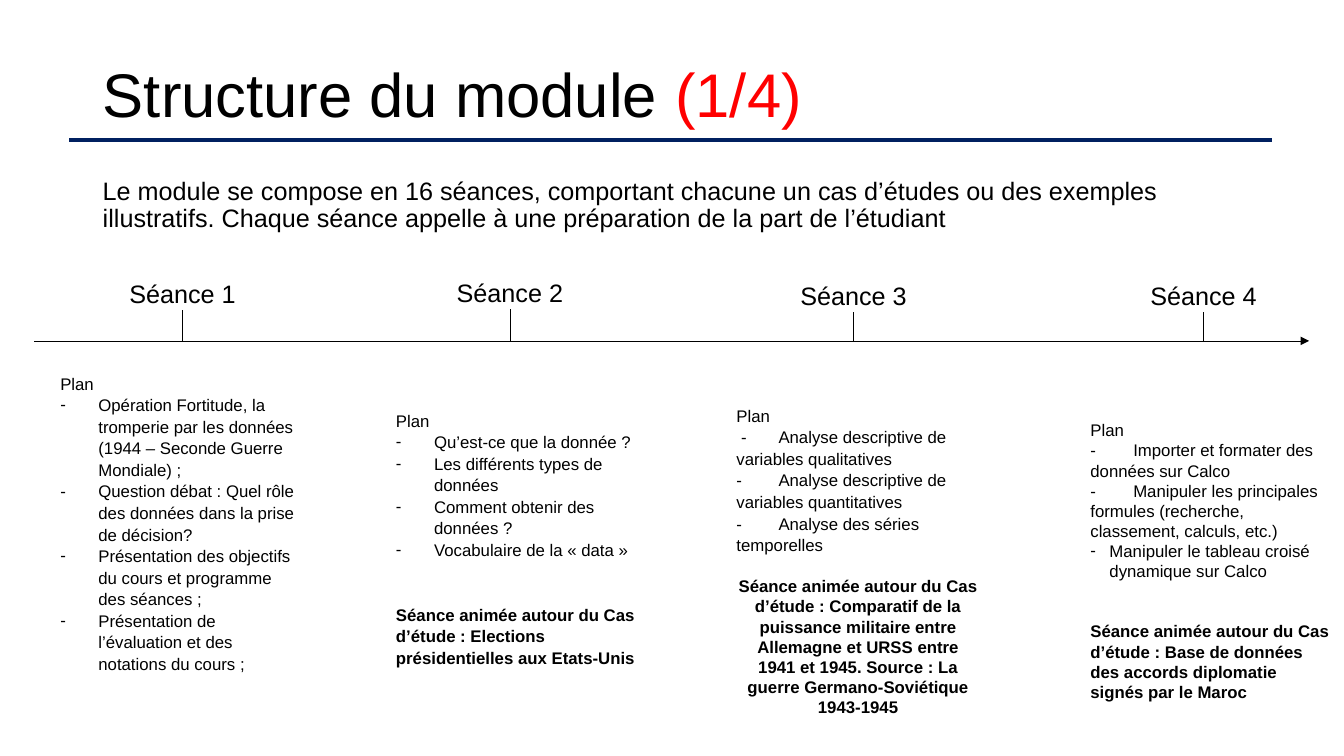
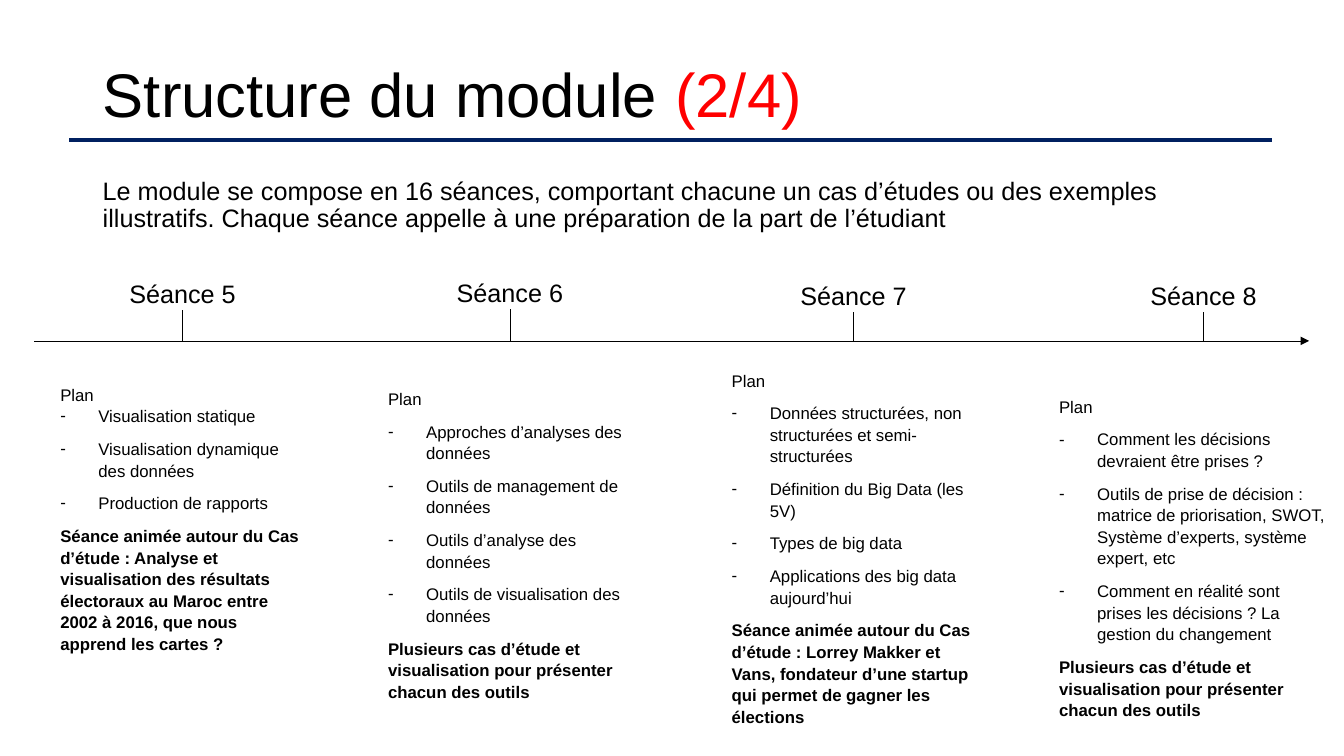
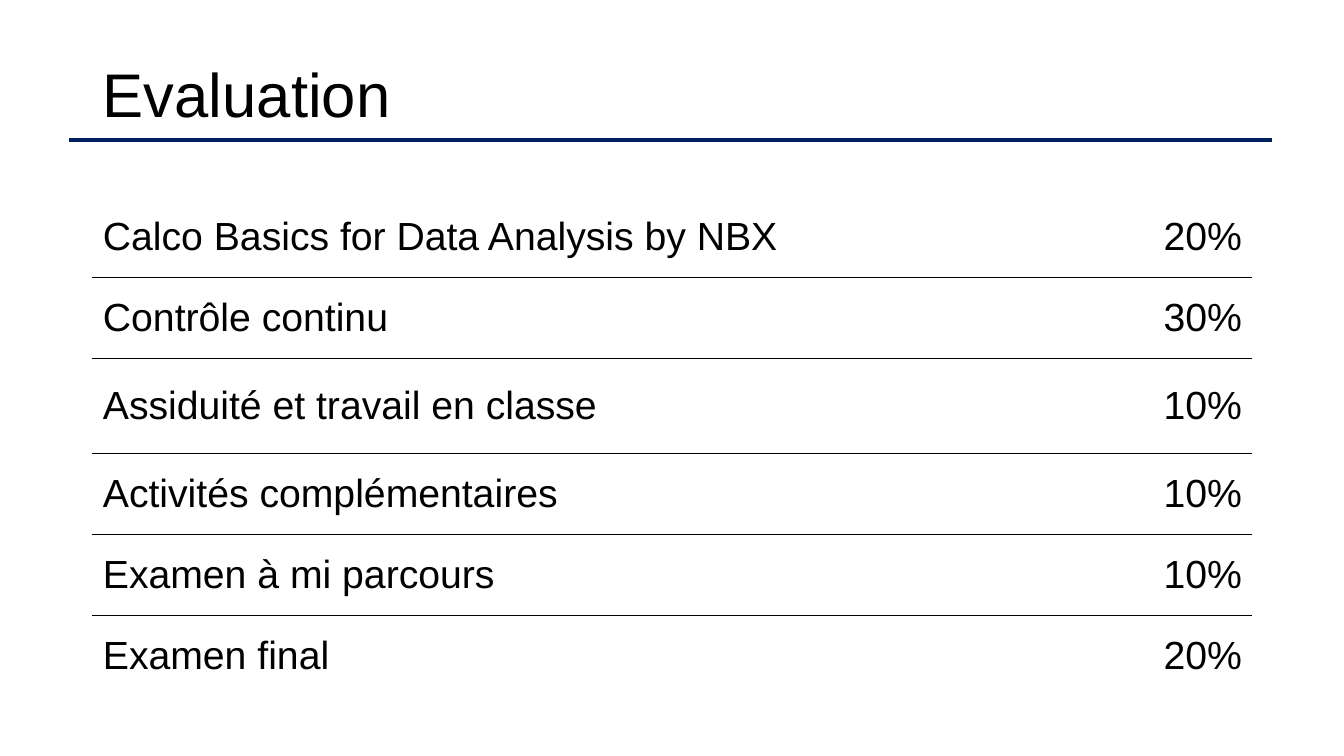
from dataclasses import dataclass

from lxml import etree
from pptx import Presentation
from pptx.dml.color import RGBColor
from pptx.enum.shapes import MSO_CONNECTOR
from pptx.enum.text import MSO_ANCHOR, MSO_AUTO_SIZE, PP_ALIGN
from pptx.oxml.ns import qn
from pptx.shapes.autoshape import Shape
from pptx.shapes.connector import Connector
from pptx.slide import Slide
from pptx.table import _Cell
from pptx.text.text import TextFrame, _Paragraph
from pptx.util import Cm, Length, Pt

STRAIGHT = MSO_CONNECTOR.STRAIGHT
LEFT, CENTER, RIGHT = PP_ALIGN.LEFT, PP_ALIGN.CENTER, PP_ALIGN.RIGHT
TOP, MIDDLE, BOTTOM = MSO_ANCHOR.TOP, MSO_ANCHOR.MIDDLE, MSO_ANCHOR.BOTTOM
TITLE_ONLY = 5
BOTTOM_SITE = 2


@dataclass(frozen=True)
class Theme:
    font: str = "Arial"
    ink: RGBColor = RGBColor(0x00, 0x00, 0x00)
    accent: RGBColor = RGBColor(0xFF, 0x00, 0x00)
    rule: RGBColor = RGBColor(0x00, 0x20, 0x60)
    paper: RGBColor = RGBColor(0xFF, 0xFF, 0xFF)
    title: Length = Pt(44)
    table: Length = Pt(28)
    body: Length = Pt(18)
    plan: Length = Pt(12)


THEME = Theme()

MARGIN = Cm(2.34)
CONTENT_WIDTH = Cm(29.21)
BAND_HEIGHT = Cm(2.46)
AXIS_Y = Cm(8.59)
LABEL_WIDTH, LABEL_HEIGHT = Cm(4.37), Cm(0.86)
PLAN_HEIGHT = Cm(8.56)
TICKS = (Cm(4.6), Cm(12.85), Cm(21.51), Cm(30.33))
LABEL_TOPS = (Cm(6.96), Cm(6.93), Cm(7.01), Cm(7.01))

INTRO = (
    "Le module se compose en 16 séances, comportant chacune un cas d’études ou des "
    "exemples illustratifs. Chaque séance appelle à une préparation de la part de l’étudiant"
)
TOOLS_CASE = "Plusieurs cas d’étude et visualisation pour présenter chacun des outils"


@dataclass(frozen=True)
class Item:
    """A line of a plan; a tab instead of a hanging indent lets it wrap to the margin."""

    text: str
    hanging: Length = Cm(0.96)
    tab: Length | None = None


@dataclass(frozen=True)
class Session:
    left: Length
    top: Length
    items: tuple[Item, ...]
    case: str = ""
    width: Length = Cm(6.63)
    plan_after: Length = Pt(0)
    item_after: Length = Pt(0)
    case_before: Length = Pt(0)
    spacing: float = 1.07
    case_spacing: float = 1.07
    case_align: PP_ALIGN = LEFT


def items(*texts: str) -> tuple[Item, ...]:
    return tuple(Item(text) for text in texts)


FIRST_SESSIONS = (
    Session(
        Cm(1.27), Cm(9.25),
        items(
            "Opération Fortitude, la tromperie par les données (1944 – Seconde Guerre Mondiale) ;",
            "Question débat : Quel rôle des données dans la prise de décision?",
            "Présentation des objectifs du cours et programme des séances ;",
            "Présentation de l’évaluation et des notations du cours ;",
        ),
    ),
    Session(
        Cm(9.73), Cm(10.18),
        items(
            "Qu’est-ce que la donnée ?",
            "Les différents types de données",
            "Comment obtenir des données ?",
            "Vocabulaire de la « data »",
        ),
        "Séance animée autour du Cas d’étude : Elections présidentielles aux Etats-Unis",
        case_before=Pt(31),
    ),
    Session(
        Cm(18.31), Cm(10.06),
        (
            Item(" -\tAnalyse descriptive de variables qualitatives", tab=Cm(1.06)),
            Item("-\tAnalyse descriptive de variables quantitatives", tab=Cm(1.06)),
            Item("-\tAnalyse des séries temporelles", tab=Cm(1.06)),
        ),
        "Séance animée autour du Cas d’étude : Comparatif de la puissance militaire entre "
        "Allemagne et URSS entre 1941 et 1945. Source : La guerre Germano-Soviétique 1943-1945",
        case_before=Pt(15), case_spacing=1.0, case_align=CENTER,
    ),
    Session(
        Cm(27.23), Cm(10.46),
        (
            Item("-\tImporter et formater des données sur Calco", tab=Cm(1.08)),
            Item("-\tManipuler les principales formules (recherche, classement, calculs, etc.)",
                 tab=Cm(1.08)),
            Item("Manipuler le tableau croisé dynamique sur Calco", hanging=Cm(0.48)),
        ),
        "Séance animée autour du Cas d’étude : Base de données des accords diplomatie "
        "signés par le Maroc",
        case_before=Pt(28.5), spacing=1.0, case_spacing=1.0,
    ),
)

SECOND_SESSIONS = (
    Session(
        Cm(1.27), Cm(9.53),
        items(
            "Visualisation statique",
            "Visualisation dynamique des données",
            "Production de rapports",
        ),
        "Séance animée autour du Cas d’étude : Analyse et visualisation des résultats "
        "électoraux au Maroc entre 2002 à 2016, que nous apprend les cartes ?",
        item_after=Pt(8),
    ),
    Session(
        Cm(9.53), Cm(9.63),
        items(
            "Approches d’analyses des données",
            "Outils de management de données",
            "Outils d’analyse des données",
            "Outils de visualisation des données",
        ),
        TOOLS_CASE, plan_after=Pt(8), item_after=Pt(8),
    ),
    Session(
        Cm(18.19), Cm(9.17),
        items(
            "Données structurées, non structurées et semi-structurées",
            "Définition du Big Data (les 5V)",
            "Types de big data",
            "Applications des big data aujourd’hui",
        ),
        "Séance animée autour du Cas d’étude : Lorrey Makker et Vans, fondateur d’une "
        "startup qui permet de gagner les élections",
        plan_after=Pt(8), item_after=Pt(8),
    ),
    Session(
        Cm(26.44), Cm(9.83),
        items(
            "Comment les décisions devraient être prises ?",
            "Outils de prise de décision : matrice de priorisation, SWOT, Système d’experts, "
            "système expert, etc",
            "Comment en réalité sont prises les décisions ? La gestion du changement",
        ),
        TOOLS_CASE, width=Cm(7.21), plan_after=Pt(8), item_after=Pt(8),
    ),
)

GRADES = (
    ("Calco Basics for Data Analysis by NBX", "20%"),
    ("Contrôle continu", "30%"),
    ("Assiduité et travail en classe", "10%"),
    ("Activités complémentaires", "10%"),
    ("Examen à mi parcours", "10%"),
    ("Examen final", "20%"),
)
GRADE_WIDTHS = (Cm(22.83), Cm(6.38))
GRADE_HEIGHT, TALL_GRADE_HEIGHT, TALL_GRADE = Cm(2.04), Cm(2.39), 2


def style(para: _Paragraph, size: Length, align: PP_ALIGN = LEFT, spacing: float = 1.0,
          before: Length = Pt(0), after: Length = Pt(0), bold: bool = False) -> None:
    para.alignment = align
    para.line_spacing = spacing
    para.space_before, para.space_after = before, after
    font = para.font
    font.name, font.size, font.bold = THEME.font, size, bold
    font.color.rgb = THEME.ink


def add_paragraph(frame: TextFrame, text: str) -> _Paragraph:
    """Use the frame's first paragraph while it is empty, then add more."""
    first = frame.paragraphs[0]
    para = frame.add_paragraph() if first.runs else first
    para.add_run().text = text
    return para


def indent(para: _Paragraph, item: Item) -> None:
    properties = para._p.get_or_add_pPr()
    if item.tab is not None:
        tabs = etree.SubElement(properties, qn("a:tabLst"))
        etree.SubElement(tabs, qn("a:tab"), pos=str(int(item.tab)), algn="l")
        return
    properties.set("marL", str(int(item.hanging)))
    properties.set("indent", str(-int(item.hanging)))
    etree.SubElement(properties, qn("a:buFont"), typeface=THEME.font)
    etree.SubElement(properties, qn("a:buChar"), char="-")


def add_box(page: Slide, left: Length, top: Length, width: Length, height: Length,
            anchor: MSO_ANCHOR = TOP) -> Shape:
    box = page.shapes.add_textbox(left, top, width, height)
    box.text_frame.word_wrap = True
    box.text_frame.vertical_anchor = anchor
    return box


def add_line(page: Slide, start: tuple[Length, Length], end: tuple[Length, Length],
             color: RGBColor, width: Length, arrow: bool = False) -> Connector:
    line = page.shapes.add_connector(STRAIGHT, *start, *end)
    line.line.color.rgb = color
    line.line.width = width
    if arrow:
        etree.SubElement(line.line._get_or_add_ln(), qn("a:tailEnd"), type="triangle")
    etree.SubElement(line._element.spPr, qn("a:effectLst"))
    return line


def add_page(deck: Presentation, heading: str, counter: str = "") -> Slide:
    page = deck.slides.add_slide(deck.slide_layouts[TITLE_ONLY])
    add_line(page, (Cm(1.75), Cm(3.53)), (Cm(32.05), Cm(3.53)), THEME.rule, Pt(2.5))
    title = page.shapes.title
    title.left, title.top, title.width, title.height = MARGIN, Cm(0.97), CONTENT_WIDTH, BAND_HEIGHT
    frame = title.text_frame
    frame.auto_size = MSO_AUTO_SIZE.NONE
    frame.vertical_anchor = BOTTOM
    para = add_paragraph(frame, heading)
    style(para, THEME.title, spacing=0.9)
    if counter:
        span = para.add_run()
        span.text = counter
        span.font.color.rgb = THEME.accent
    return page


def add_milestone(page: Slide, name: str, tick: Length, top: Length) -> None:
    label = add_box(page, tick - LABEL_WIDTH // 2, top, LABEL_WIDTH, LABEL_HEIGHT, MIDDLE)
    style(add_paragraph(label.text_frame, name), THEME.body, CENTER)
    mark = add_line(page, (tick, top + LABEL_HEIGHT), (tick, AXIS_Y), THEME.ink, Pt(0.5))
    mark.begin_connect(label, BOTTOM_SITE)


def add_plan(page: Slide, session: Session) -> None:
    frame = add_box(page, session.left, session.top, session.width, PLAN_HEIGHT).text_frame
    style(add_paragraph(frame, "Plan"), THEME.plan, spacing=session.spacing,
          after=session.plan_after)
    for item in session.items:
        para = add_paragraph(frame, item.text)
        indent(para, item)
        style(para, THEME.plan, spacing=session.spacing, after=session.item_after)
    if session.case:
        style(add_paragraph(frame, session.case), THEME.plan, session.case_align,
              session.case_spacing, before=session.case_before, bold=True)


def add_timeline_page(deck: Presentation, counter: str, first: int,
                      sessions: tuple[Session, ...]) -> None:
    page = add_page(deck, "Structure du module ", counter)
    intro = add_box(page, MARGIN, Cm(3.96), CONTENT_WIDTH, BAND_HEIGHT, MIDDLE)
    style(add_paragraph(intro.text_frame, INTRO), THEME.body, spacing=0.9, before=Pt(10))
    add_line(page, (Cm(0.86), AXIS_Y), (Cm(32.99), AXIS_Y), THEME.ink, Pt(0.5), arrow=True)
    for number, (session, tick, top) in enumerate(zip(sessions, TICKS, LABEL_TOPS), first):
        add_milestone(page, f"Séance {number}", tick, top)
        add_plan(page, session)


def set_borders(cell: _Cell, top: RGBColor, bottom: RGBColor) -> None:
    properties = cell._tc.get_or_add_tcPr()
    sides = {"L": THEME.paper, "R": THEME.paper, "T": top, "B": bottom}
    for side, color in sides.items():
        line = etree.SubElement(properties, qn(f"a:ln{side}"), w=str(int(Pt(1))))
        fill = etree.SubElement(line, qn("a:solidFill"))
        etree.SubElement(fill, qn("a:srgbClr"), val=str(color))


def add_grades_page(deck: Presentation) -> None:
    page = add_page(deck, "Evaluation")
    last = len(GRADES) - 1
    height = last * GRADE_HEIGHT + TALL_GRADE_HEIGHT
    table = page.shapes.add_table(len(GRADES), len(GRADE_WIDTHS), MARGIN, Cm(4.95),
                                  CONTENT_WIDTH, height).table
    table.first_row = table.horz_banding = False
    for column, width in zip(table.columns, GRADE_WIDTHS):
        column.width = width
    for index, grade in enumerate(GRADES):
        table.rows[index].height = TALL_GRADE_HEIGHT if index == TALL_GRADE else GRADE_HEIGHT
        top = THEME.paper if index == 0 else THEME.ink
        bottom = THEME.paper if index == last else THEME.ink
        for column, (text, align) in enumerate(zip(grade, (LEFT, RIGHT))):
            cell = table.cell(index, column)
            set_borders(cell, top, bottom)
            cell.fill.background()
            cell.vertical_anchor = MIDDLE
            style(add_paragraph(cell.text_frame, text), THEME.table, align)


def main() -> None:
    deck = Presentation()
    deck.slide_width, deck.slide_height = Cm(33.87), Cm(19.05)
    add_timeline_page(deck, "(1/4)", 1, FIRST_SESSIONS)
    add_timeline_page(deck, "(2/4)", 5, SECOND_SESSIONS)
    add_grades_page(deck)
    deck.save("out.pptx")


if __name__ == "__main__":
    main()
